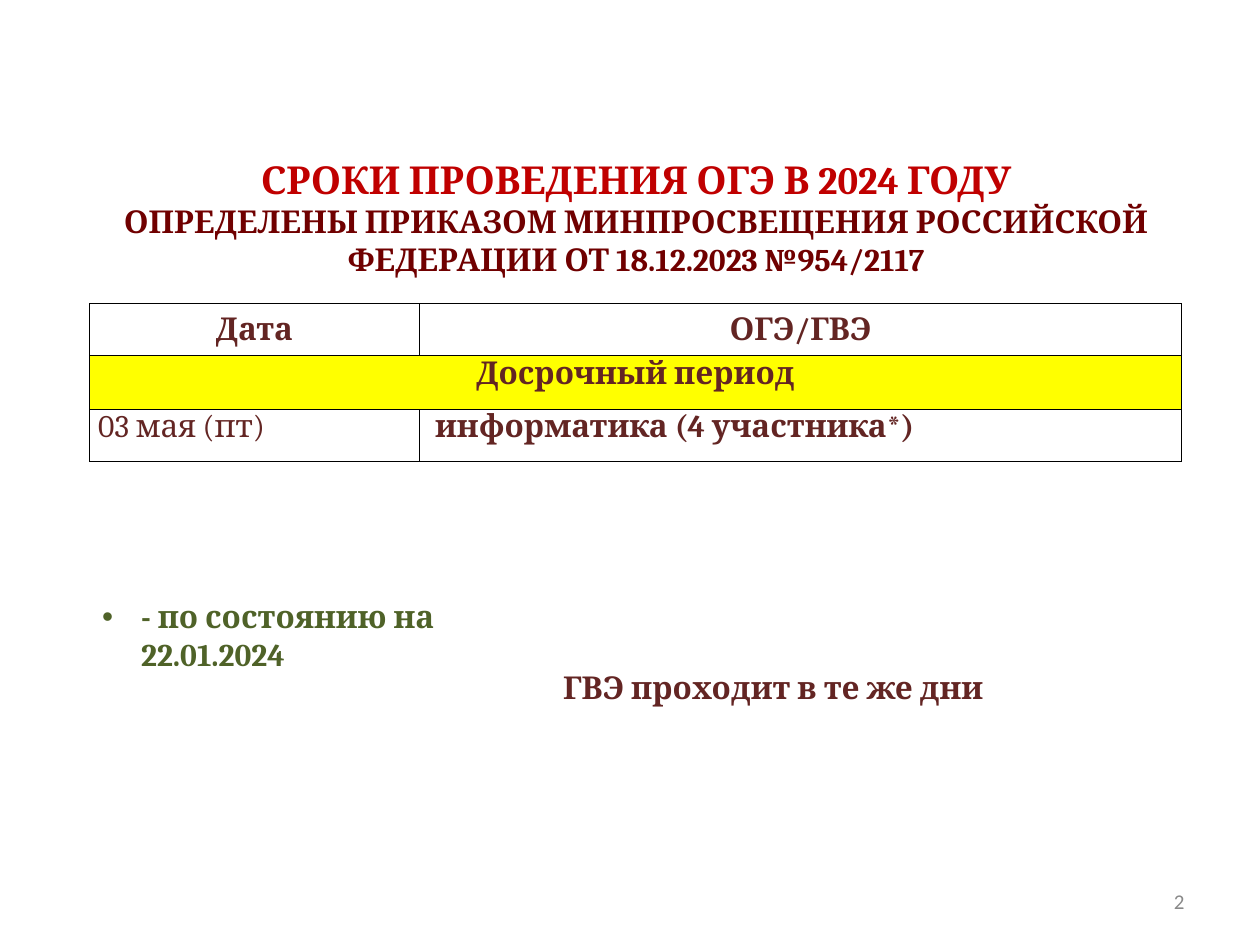
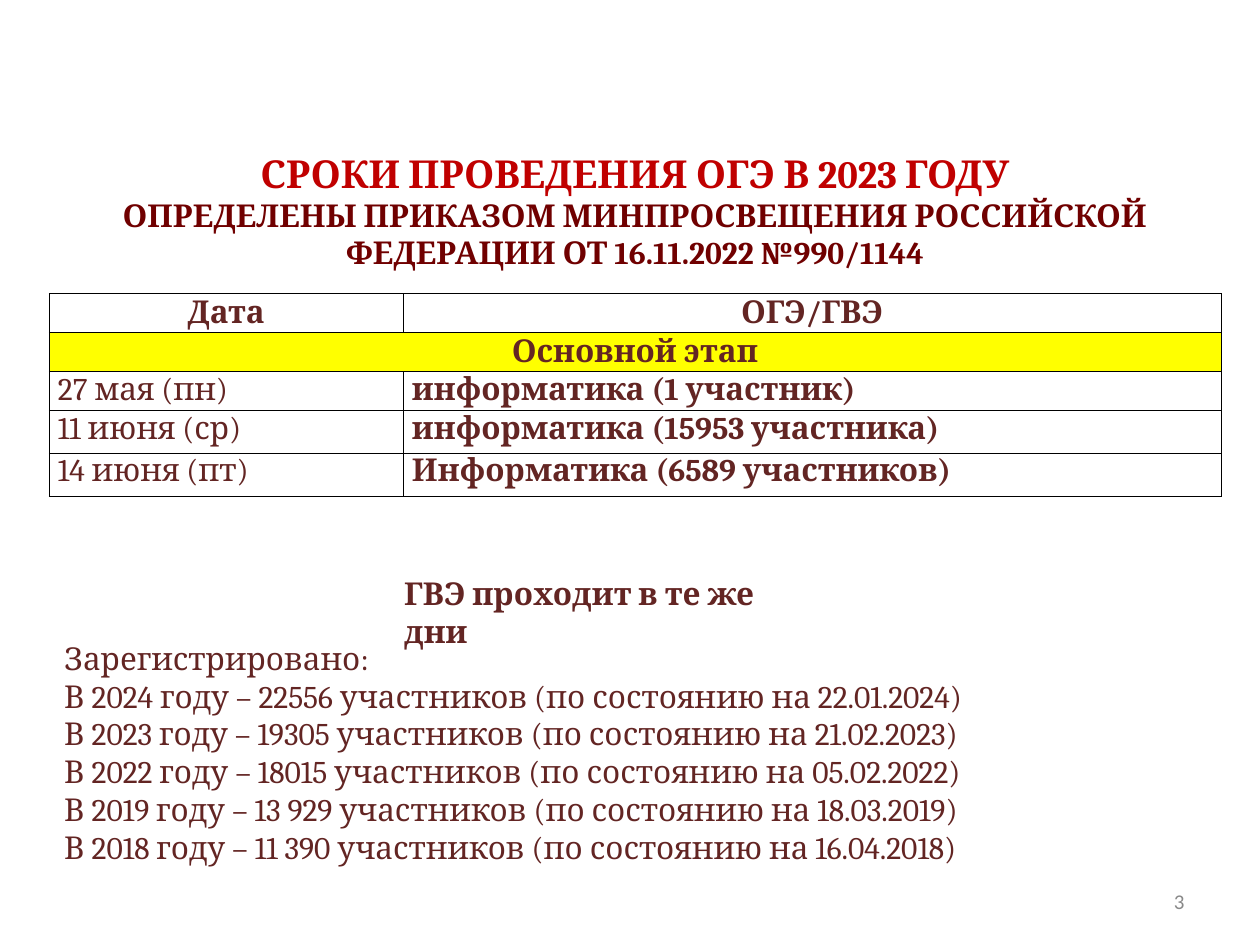
"""Build two slides with the exam dates and participant numbers."""
from copy import deepcopy
from dataclasses import dataclass
from typing import NamedTuple

from lxml import etree
from pptx import Presentation
from pptx.dml.color import RGBColor
from pptx.enum.text import MSO_ANCHOR, MSO_AUTO_SIZE, PP_ALIGN
from pptx.oxml.ns import qn
from pptx.util import Emu, Pt

LEFT, CENTER, RIGHT = PP_ALIGN.LEFT, PP_ALIGN.CENTER, PP_ALIGN.RIGHT
TOP, MIDDLE = MSO_ANCHOR.TOP, MSO_ANCHOR.MIDDLE
NO_AUTOSIZE = MSO_AUTO_SIZE.NONE

EMU_PER_PX = 9144
COLORS = {
    "heading": "C00000",
    "order": "700000",
    "text": "632523",
    "note": "4F6228",
    "number": "898989",
    "band": "FFFF00",
    "border": "000000",
}
BORDER_WIDTH = Pt(0.5)
BULLET_INDENT = 31


class Box(NamedTuple):
    left: int
    top: int
    width: int
    height: int


class Style(NamedTuple):
    color: str
    size: int = 18
    bold: bool = False
    font: str = "Cambria"


HEADING = Style("heading", 22, True)
ORDER = Style("order", bold=True)
PLAIN = Style("text")
STRONG = Style("text", bold=True)
NOTE = Style("note", bold=True)
NUMBER = Style("number", 12, font="Calibri")

NUMBER_BOX = Box(717, 695, 233, 40)
HEADER_MARGINS = (1, 1, 1, 0)
ENTRY_MARGINS = (7, 0, 7, 0)


@dataclass(frozen=True)
class Schedule:
    box: Box
    columns: tuple[int, int]
    row_heights: tuple[int, ...]
    period: str
    exams: tuple[tuple[str, str], ...]


@dataclass(frozen=True)
class ExamSlide:
    number: int
    title_box: Box
    year: int
    order: str
    schedule: Schedule
    remark_box: Box
    list_box: Box
    list_lines: tuple[str, ...]
    list_style: Style
    bulleted: bool


SLIDES = (
    ExamSlide(
        number=2,
        title_box=Box(55, 118, 900, 108),
        year=2024,
        order="18.12.2023 №954/2117",
        schedule=Schedule(
            Box(71, 241, 867, 125), (262, 605), (41, 43, 41), "Досрочный период",
            (("03 мая (пт)", " информатика (4 участника*)"),),
        ),
        remark_box=Box(437, 525, 459, 40),
        list_box=Box(71, 469, 400, 70),
        list_lines=("- по состоянию на 22.01.2024",),
        list_style=NOTE,
        bulleted=True,
    ),
    ExamSlide(
        number=3,
        title_box=Box(54, 113, 900, 108),
        year=2023,
        order="16.11.2022 №990/1144",
        schedule=Schedule(
            Box(39, 233, 930, 161), (281, 649), (31, 31, 31, 34, 34), "Основной этап",
            (
                ("27 мая (пн)", "информатика (1 участник)"),
                ("11 июня (ср)", "информатика (15953 участника)"),
                ("14 июня (пт)", "Информатика (6589 участников)"),
            ),
        ),
        remark_box=Box(311, 451, 326, 40),
        list_box=Box(41, 502, 906, 222),
        list_lines=(
            "Зарегистрировано:",
            "В 2024 году – 22556 участников (по состоянию на 22.01.2024)",
            "В 2023 году – 19305 участников (по состоянию на 21.02.2023)",
            "В 2022 году – 18015 участников (по состоянию на 05.02.2022)",
            "В 2019 году – 13 929 участников (по состоянию на 18.03.2019)",
            "В 2018 году – 11 390 участников (по состоянию на 16.04.2018)",
        ),
        list_style=PLAIN,
        bulleted=False,
    ),
)


def px(length: int) -> Emu:
    """Turn px into EMU."""
    return Emu(length * EMU_PER_PX)


def place(shape, box: Box) -> None:
    """Move and size a shape to its box."""
    shape.left, shape.top, shape.width, shape.height = map(px, box)


def style_run(run, style: Style) -> None:
    """Format one run."""
    run.font.name = style.font
    run.font.size = Pt(style.size)
    run.font.bold = style.bold
    run.font.color.rgb = RGBColor.from_string(COLORS[style.color])


def write(frame, text: str, style: Style, align=LEFT) -> None:
    """Fill a text frame with evenly formatted paragraphs."""
    frame.text = text
    for paragraph in frame.paragraphs:
        paragraph.alignment = align
        for run in paragraph.runs:
            style_run(run, style)


def add_title(slide, content: ExamSlide) -> None:
    """Fill the title placeholder with the heading and the order."""
    title = slide.shapes.title
    place(title, content.title_box)
    frame = title.text_frame
    frame.text = (
        f"СРОКИ ПРОВЕДЕНИЯ ОГЭ В {content.year} ГОДУ\v"
        f"ОПРЕДЕЛЕНЫ ПРИКАЗОМ МИНПРОСВЕЩЕНИЯ РОССИЙСКОЙ ФЕДЕРАЦИИ ОТ {content.order}"
    )
    frame.auto_size = NO_AUTOSIZE
    frame.vertical_anchor = MIDDLE
    paragraph = frame.paragraphs[0]
    paragraph.alignment = CENTER
    for run, style in zip(paragraph.runs, (HEADING, ORDER)):
        style_run(run, style)
    line_break = paragraph._p.find(qn("a:br"))
    line_break.append(deepcopy(paragraph.runs[0]._r.find(qn("a:rPr"))))


def add_list(slide, content: ExamSlide) -> None:
    """Fill the body placeholder with the note or the yearly numbers."""
    body = slide.placeholders[1]
    place(body, content.list_box)
    frame = body.text_frame
    write(frame, "\n".join(content.list_lines), content.list_style)
    frame.auto_size = NO_AUTOSIZE
    frame.word_wrap = True
    indent = px(BULLET_INDENT) if content.bulleted else 0
    for paragraph in frame.paragraphs:
        paragraph.space_before = Pt(0)
        properties = paragraph._p.get_or_add_pPr()
        properties.set("marL", str(indent))
        properties.set("indent", str(-indent))
        if content.bulleted:
            etree.SubElement(properties, qn("a:buChar"), char="•")
        else:
            etree.SubElement(properties, qn("a:buNone"))


def add_label(slide, box: Box, text: str, style: Style, align=LEFT, anchor=TOP) -> None:
    """Add a wrapping text box."""
    frame = slide.shapes.add_textbox(*map(px, box)).text_frame
    frame.word_wrap = True
    frame.vertical_anchor = anchor
    write(frame, text, style, align)


def add_borders(cell) -> None:
    """Draw thin lines on all four sides of a cell."""
    properties = cell._tc.get_or_add_tcPr()
    for side in ("lnL", "lnR", "lnT", "lnB"):
        line = etree.SubElement(properties, qn(f"a:{side}"), w=str(BORDER_WIDTH))
        fill = etree.SubElement(line, qn("a:solidFill"))
        etree.SubElement(fill, qn("a:srgbClr"), val=COLORS["border"])


def fill_cell(cell, text: str, style: Style, align, anchor, margins) -> None:
    """Write a cell's text and set its layout."""
    write(cell.text_frame, text, style, align)
    cell.vertical_anchor = anchor
    cell.margin_left, cell.margin_top, cell.margin_right, cell.margin_bottom = map(px, margins)


def add_schedule(slide, schedule: Schedule) -> None:
    """Add the table of dates with its highlighted period row."""
    table = slide.shapes.add_table(
        len(schedule.row_heights), len(schedule.columns), *map(px, schedule.box)
    ).table
    table.first_row = table.horz_banding = False
    for column, width in zip(table.columns, schedule.columns):
        column.width = px(width)
    for row, height in zip(table.rows, schedule.row_heights):
        row.height = px(height)
    for cell in table.iter_cells():
        add_borders(cell)
        cell.fill.background()

    for column, heading in enumerate(("Дата", "ОГЭ/ГВЭ")):
        fill_cell(table.cell(0, column), heading, STRONG, CENTER, MIDDLE, HEADER_MARGINS)

    period = table.cell(1, 0)
    period.merge(table.cell(1, 1))
    fill_cell(period, schedule.period, STRONG, CENTER, TOP, HEADER_MARGINS)
    period.fill.solid()
    period.fill.fore_color.rgb = RGBColor.from_string(COLORS["band"])

    for row, exam in enumerate(schedule.exams, start=2):
        for column, (text, style) in enumerate(zip(exam, (PLAIN, STRONG))):
            fill_cell(table.cell(row, column), text, style, LEFT, TOP, ENTRY_MARGINS)


def add_exam_slide(presentation, content: ExamSlide) -> None:
    """Add one slide with its title, table, remark, list and number."""
    slide = presentation.slides.add_slide(presentation.slide_layouts[1])
    add_title(slide, content)
    add_schedule(slide, content.schedule)
    add_label(slide, NUMBER_BOX, str(content.number), NUMBER, RIGHT, MIDDLE)
    add_list(slide, content)
    add_label(slide, content.remark_box, "ГВЭ проходит в те же дни", STRONG)


def main() -> None:
    """Build and save the presentation."""
    presentation = Presentation()
    presentation.slide_width, presentation.slide_height = px(1000), px(750)
    for content in SLIDES:
        add_exam_slide(presentation, content)
    presentation.save("out.pptx")


if __name__ == "__main__":
    main()
